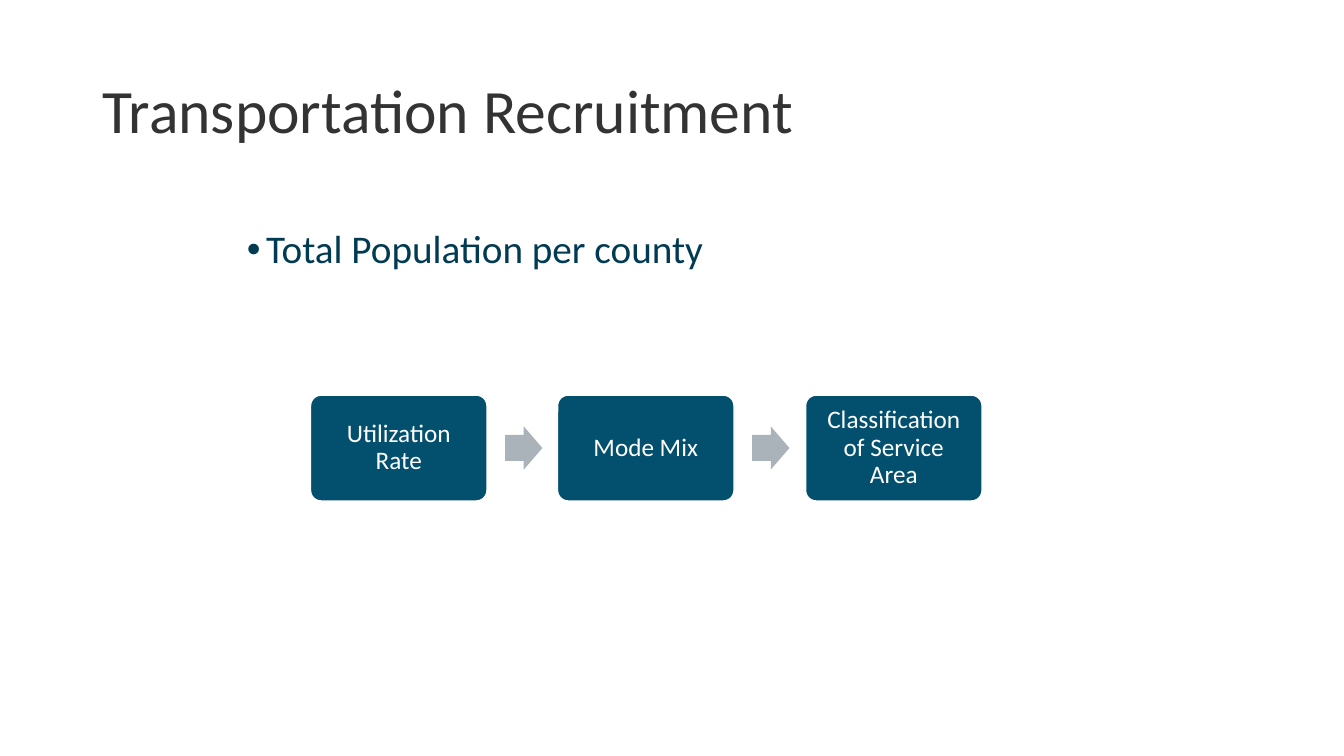
from dataclasses import dataclass

from lxml.etree import SubElement
from pptx import Presentation
from pptx.dml.color import RGBColor
from pptx.enum.shapes import MSO_SHAPE
from pptx.enum.text import MSO_ANCHOR, PP_ALIGN
from pptx.oxml.ns import qn
from pptx.util import Pt

PX = 9144  # EMU per px, 100 px to the inch


@dataclass(frozen=True)
class Theme:
    font: str = "Calibri"
    white: str = "FFFFFF"
    ink: str = "333333"
    navy: str = "003B53"
    teal: str = "024F6E"
    gray: str = "ABB3BA"
    head: int = 44
    body: int = 28
    label: int = 18


class Deck:
    def __init__(self, theme, width, height):
        self.theme = theme
        self.prs = Presentation()
        self.prs.slide_width, self.prs.slide_height = width * PX, height * PX
        self.slide = self.prs.slides.add_slide(self.prs.slide_layouts[6])

    def label(self, shape, text, size, color, pad=(10, 5),
              anchor=MSO_ANCHOR.TOP, align=PP_ALIGN.LEFT, bullet=0):
        """Set text in a shape; bullet is the hanging indent in px."""
        frame = shape.text_frame
        across, down = pad[0] * PX, pad[1] * PX
        para = frame.paragraphs[0]
        para.text = text
        if bullet:
            props = para._p.get_or_add_pPr()
            props.set("marL", str(bullet * PX))
            props.set("indent", str(-bullet * PX))
            SubElement(props, qn("a:buFont")).set("typeface", "Arial")
            SubElement(props, qn("a:buChar")).set("char", "•")
        font = para.runs[0].font
        formats = [
            (frame, {"word_wrap": True, "vertical_anchor": anchor,
                     "margin_left": across, "margin_right": across,
                     "margin_top": down, "margin_bottom": down}),
            (para, {"alignment": align, "line_spacing": 0.9}),
            (font, {"name": self.theme.font, "size": Pt(size)}),
        ]
        for target, values in formats:
            for name, value in values.items():
                setattr(target, name, value)
        font.color.rgb = RGBColor.from_string(color)

    def text(self, at, *args, **style):
        box = self.slide.shapes.add_textbox(*(n * PX for n in at))
        self.label(box, *args, **style)

    def shape(self, kind, at, fill, adjust, line=None):
        item = self.slide.shapes.add_shape(kind, *(n * PX for n in at))
        item.shadow.inherit = False
        item.fill.solid()
        item.fill.fore_color.rgb = RGBColor.from_string(fill)
        for i, value in enumerate(adjust):
            item.adjustments[i] = value
        if line:
            item.line.color.rgb = RGBColor.from_string(line)
            item.line.width = Pt(1)
        else:
            item.line.fill.background()
        return item

    def step(self, at, text):
        look = self.theme
        box = self.shape(MSO_SHAPE.ROUNDED_RECTANGLE, at, look.teal, [0.1], look.white)
        self.label(box, text, look.label, look.white, pad=(10, 10),
                   anchor=MSO_ANCHOR.MIDDLE, align=PP_ALIGN.CENTER)

    def arrow(self, at):
        self.shape(MSO_SHAPE.RIGHT_ARROW, at, self.theme.gray, [0.6, 0.5])


def main():
    look = Theme()
    deck = Deck(look, 1333, 750)

    # Title and bullet
    deck.text((92, 40, 1150, 145), "Transportation Recruitment", look.head, look.ink,
              anchor=MSO_ANCHOR.MIDDLE)
    deck.text((235, 223, 862, 453), "Total Population per county", look.body, look.navy,
              bullet=19)

    # Process steps, with an arrow between neighbours
    steps = ["Utilization Rate", "Mode Mix", "Classification of Service Area"]
    for i, text in enumerate(steps):
        left = 308 + i * 491 // 2
        deck.step((left, 392, 175, 105), text)
        if i < len(steps) - 1:
            deck.arrow((left + 193, 423, 37, 43))

    deck.prs.save("out.pptx")


if __name__ == "__main__":
    main()
